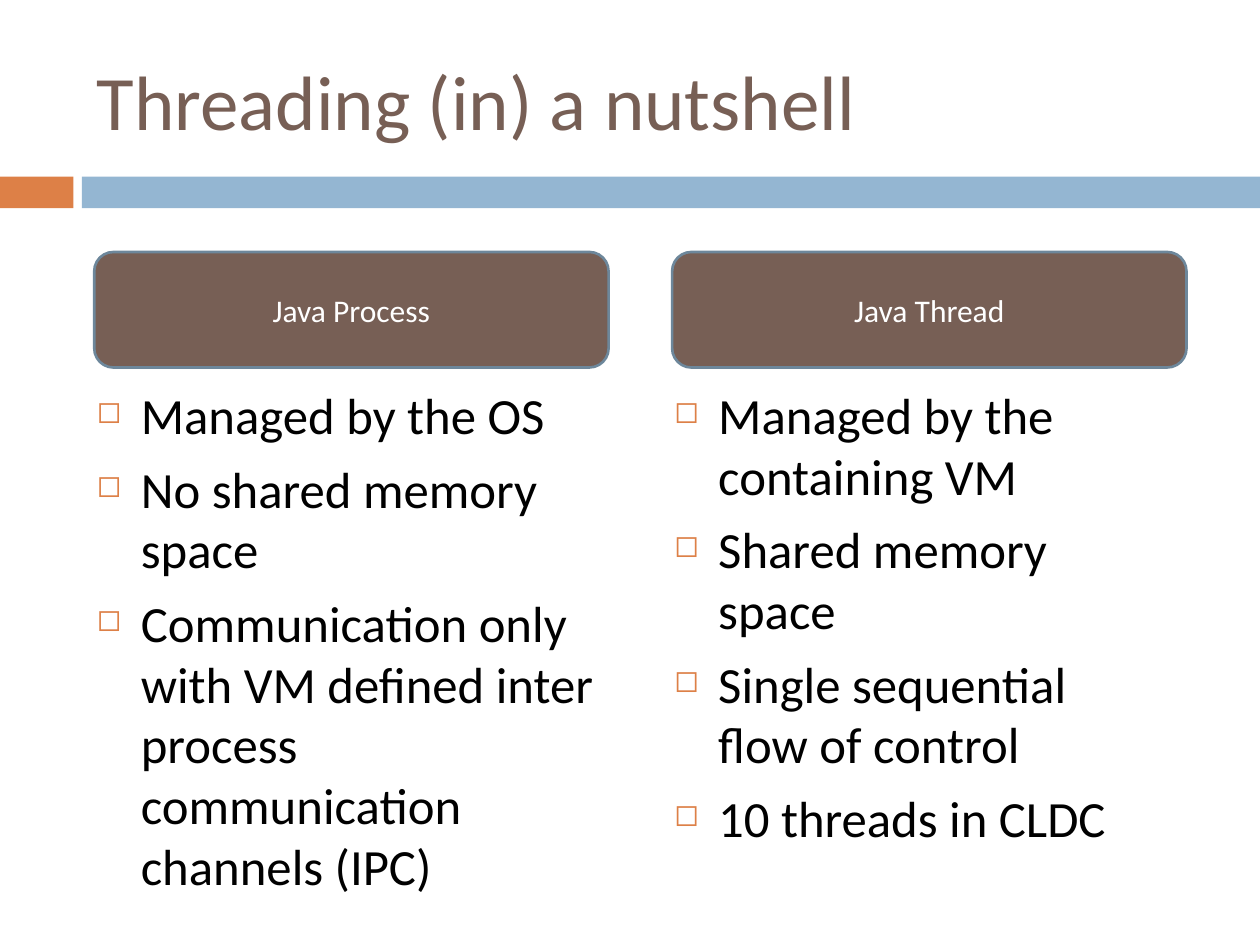
"""Build a slide that compares Java processes with Java threads."""
from lxml.etree import SubElement
from pptx import Presentation
from pptx.dml.color import RGBColor
from pptx.enum.shapes import MSO_SHAPE
from pptx.enum.text import MSO_ANCHOR, PP_ALIGN
from pptx.oxml.ns import qn
from pptx.util import Cm, Pt

BROWN, ORANGE, BLUE = "775F55", "DD8047", "94B6D2"


def color(value):
    return RGBColor.from_string(value)


def add_run(paragraph, text, size, font_color):
    run = paragraph.add_run()
    run.text = text
    run.font.name = "Calibri"
    run.font.size = Pt(size)
    run.font.color.rgb = color(font_color)


presentation = Presentation()
presentation.slide_width = Cm(25.4)
presentation.slide_height = Cm(19.05)
slide = presentation.slides.add_slide(presentation.slide_layouts[6])

for left, width, fill in [(0, 1.48, ORANGE), (1.65, 23.75, BLUE)]:
    bar = slide.shapes.add_shape(MSO_SHAPE.RECTANGLE, Cm(left), Cm(3.56), Cm(width), Cm(0.64))
    bar.shadow.inherit = False
    bar.fill.solid()
    bar.fill.fore_color.rgb = color(fill)
    bar.line.fill.background()

title = slide.shapes.add_textbox(Cm(1.7), Cm(0.64), Cm(22.66), Cm(2.74))
title.text_frame.word_wrap = True
title.text_frame.vertical_anchor = MSO_ANCHOR.MIDDLE
add_run(title.text_frame.paragraphs[0], "Threading (in) a nutshell", 44, BROWN)

columns = [
    (1.9, 1.7, 10.57, "Java Process", [
        "Managed by the OS",
        "No shared memory space",
        "Communication only with VM defined inter process communication channels (IPC)",
    ]),
    (13.55, 13.34, 10.39, "Java Thread", [
        "Managed by the containing VM",
        "Shared memory space",
        "Single sequential flow of control",
        "10 threads in CLDC",
    ]),
]

for header_left, body_left, body_width, heading, points in columns:
    body = slide.shapes.add_textbox(Cm(body_left), Cm(7.62), Cm(body_width), Cm(9.73))
    body.text_frame.word_wrap = True
    for index, point in enumerate(points):
        paragraph = body.text_frame.paragraphs[0] if index == 0 else body.text_frame.add_paragraph()
        paragraph.space_before = Pt(7)
        add_run(paragraph, point, 29, "000000")
        properties = paragraph._p.get_or_add_pPr()
        properties.set("marL", str(Cm(0.89)))
        properties.set("indent", str(-Cm(0.89)))
        bullet_color = SubElement(properties, qn("a:buClr"))
        SubElement(bullet_color, qn("a:srgbClr"), val=ORANGE)
        SubElement(properties, qn("a:buSzPct"), val="60000")
        SubElement(properties, qn("a:buChar"), char="◻")

    header = slide.shapes.add_shape(
        MSO_SHAPE.ROUNDED_RECTANGLE, Cm(header_left), Cm(5.08), Cm(10.37), Cm(2.33))
    header.shadow.inherit = False
    header.fill.solid()
    header.fill.fore_color.rgb = color(BROWN)
    header.line.color.rgb = color("6D879B")
    header.line.width = Pt(1.5)
    header.text_frame.vertical_anchor = MSO_ANCHOR.MIDDLE
    paragraph = header.text_frame.paragraphs[0]
    paragraph.alignment = PP_ALIGN.CENTER
    add_run(paragraph, heading, 18, "FFFFFF")

presentation.save("out.pptx")
